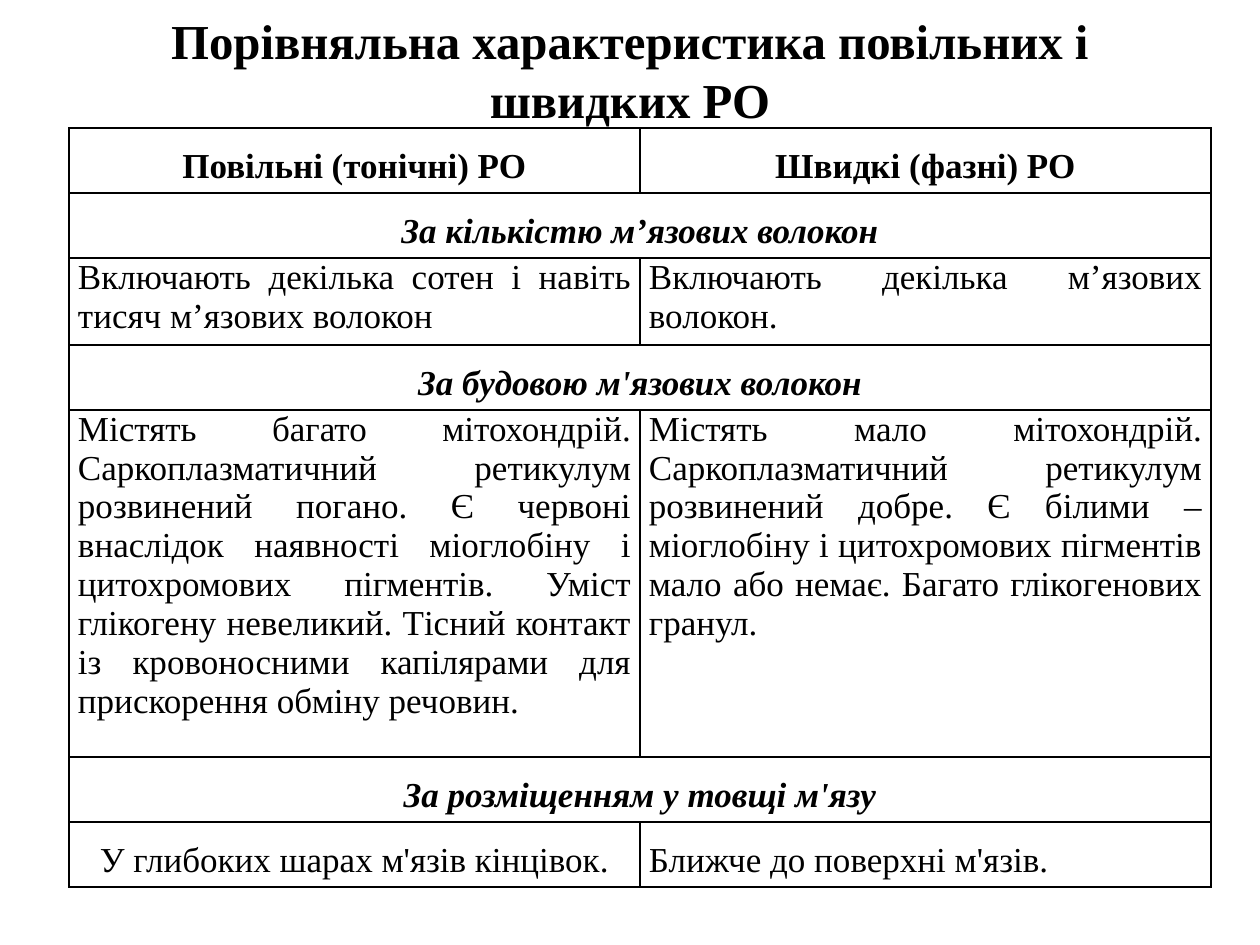
from lxml.etree import SubElement
from pptx import Presentation
from pptx.dml.color import RGBColor
from pptx.enum.text import MSO_ANCHOR, PP_ALIGN
from pptx.oxml.ns import qn
from pptx.util import Emu, Pt

PX = 914400 // 126
FONT = "Times New Roman"
COLORS = {"ink": "000000", "paper": "FFFFFF"}
COLUMN_WIDTHS = [571, 571]
CENTER, JUSTIFY = PP_ALIGN.CENTER, PP_ALIGN.JUSTIFY

# Style: alignment, line spacing, bold, italic
STYLES = {
    "header": (CENTER, 1.5, True, False),
    "section": (CENTER, 1.5, True, True),
    "body": (JUSTIFY, 1.0, False, False),
    "centered": (CENTER, 1.5, False, False),
    "spaced": (JUSTIFY, 1.5, False, False),
}

# Row: height in px, then (style, text) for each cell; a lone cell spans the row
ROWS = [
    (65, [("header", "Повільні (тонічні) РО"), ("header", "Швидкі (фазні) РО")]),
    (65, [("section", "За кількістю м’язових волокон")]),
    (87, [("body", "Включають декілька сотен і навіть тисяч м’язових волокон"),
          ("body", "Включають декілька м’язових волокон.")]),
    (65, [("section", "За будовою м'язових волокон")]),
    (347, [("body", "Містять багато мітохондрій. Саркоплазматичний ретикулум "
                    "розвинений погано. Є червоні внаслідок наявності міоглобіну і "
                    "цитохромових пігментів. Уміст глікогену невеликий. Тісний контакт "
                    "із кровоносними капілярами для прискорення обміну речовин."),
           ("body", "Містять мало мітохондрій. Саркоплазматичний ретикулум "
                    "розвинений добре. Є білими – міоглобіну і цитохромових пігментів "
                    "мало або немає. Багато глікогенових гранул.")]),
    (65, [("section", "За розміщенням у товщі м'язу")]),
    (65, [("centered", "У глибоких шарах м'язів кінцівок."),
          ("spaced", "Ближче до поверхні м'язів.")]),
]


def px(length):
    return Emu(length * PX)


def color(name):
    return RGBColor.from_string(COLORS[name])


def add_span(para, text, size, bold, italic=False):
    span = para.add_run()
    span.text = text
    span.font.name = FONT
    span.font.size = Pt(size)
    span.font.bold = bold
    span.font.italic = italic
    span.font.color.rgb = color("ink")


def add_title(page, left, top, width, height):
    box = page.shapes.add_textbox(px(left), px(top), px(width), px(height))
    frame = box.text_frame
    frame.word_wrap = True
    frame.vertical_anchor = MSO_ANCHOR.TOP
    frame.margin_top = frame.margin_bottom = 0
    para = frame.paragraphs[0]
    para.alignment = CENTER
    add_span(para, "Порівняльна характеристика повільних і швидких РО", 27.9, True)


def outline_cell(cell):
    """Draw all four borders; they must precede the fill in the cell properties."""
    properties = cell._tc.get_or_add_tcPr()
    for side in ("a:lnL", "a:lnR", "a:lnT", "a:lnB"):
        line = SubElement(properties, qn(side), w=str(Pt(1)))
        fill = SubElement(line, qn("a:solidFill"))
        SubElement(fill, qn("a:srgbClr"), val=COLORS["ink"])


def style_cell(cell):
    cell.margin_left = cell.margin_right = px(9)
    cell.margin_top = cell.margin_bottom = 0
    outline_cell(cell)
    cell.fill.background()


def fill_cell(cell, style, text):
    alignment, spacing, bold, italic = STYLES[style]
    para = cell.text_frame.paragraphs[0]
    para.alignment = alignment
    para.line_spacing = spacing
    add_span(para, text, 20, bold, italic)


def add_comparison(page, left, top):
    height = sum(row_height for row_height, _ in ROWS)
    table = page.shapes.add_table(
        len(ROWS), len(COLUMN_WIDTHS), px(left), px(top),
        px(sum(COLUMN_WIDTHS)), px(height)).table
    table.first_row = table.horz_banding = False
    for column, width in zip(table.columns, COLUMN_WIDTHS):
        column.width = px(width)
    for index, (row_height, entries) in enumerate(ROWS):
        row = table.rows[index]
        row.height = px(row_height)
        for cell in row.cells:
            style_cell(cell)
        if len(entries) == 1:
            table.cell(index, 0).merge(table.cell(index, len(COLUMN_WIDTHS) - 1))
        for cell, (style, text) in zip(row.cells, entries):
            fill_cell(cell, style, text)


def main():
    deck = Presentation()
    deck.slide_width, deck.slide_height = px(1260), px(945)
    page = deck.slides.add_slide(deck.slide_layouts[6])
    page.background.fill.solid()
    page.background.fill.fore_color.rgb = color("paper")
    add_title(page, 63, 11, 1134, 117)
    add_comparison(page, 69, 128)
    deck.save("out.pptx")


if __name__ == "__main__":
    main()
